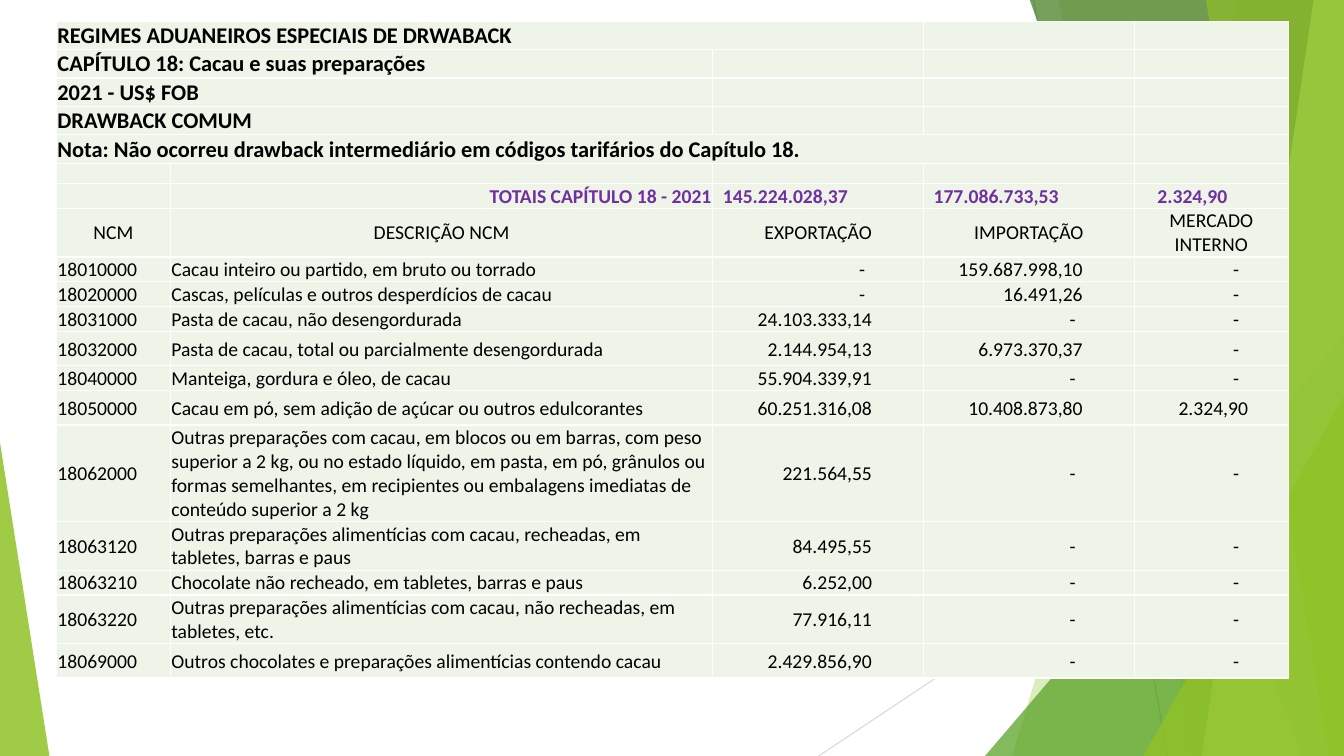
from dataclasses import dataclass

from lxml import etree
from pptx import Presentation
from pptx.dml.color import RGBColor
from pptx.enum.shapes import MSO_CONNECTOR, MSO_SHAPE
from pptx.enum.text import MSO_ANCHOR, PP_ALIGN
from pptx.oxml.ns import qn
from pptx.util import Inches, Pt

STRAIGHT = MSO_CONNECTOR.STRAIGHT
TRIANGLE = MSO_SHAPE.ISOSCELES_TRIANGLE
MIDDLE = MSO_ANCHOR.MIDDLE
LEFT, CENTER, RIGHT = PP_ALIGN.LEFT, PP_ALIGN.CENTER, PP_ALIGN.RIGHT


@dataclass(frozen=True)
class Theme:
    font: str = "Calibri"
    title_size: int = 16
    body_size: int = 14
    empty_size: int = 10
    black: str = "000000"
    purple: str = "7030A0"
    white: str = "FFFFFF"
    cell: str = "EEF4E8"
    gray: str = "BFBFBF"
    pale_gray: str = "D9D9D9"
    lime: str = "90C226"
    green: str = "54A021"
    dark_green: str = "3F7819"
    light_lime: str = "C0E474"


THEME = Theme()
WIDTH, HEIGHT, TOP = 13.33, 7.5, -0.01

TITLES = [
    ("REGIMES ADUANEIROS ESPECIAIS DE DRWABACK", 3),
    ("CAPÍTULO 18: Cacau e suas preparações", 2),
    ("2021 - US$ FOB", 2),
    ("DRAWBACK COMUM", 2),
    ("Nota: Não ocorreu drawback intermediário em códigos tarifários do Capítulo 18.", 4),
]
TOTALS = ["", "TOTAIS CAPÍTULO 18 - 2021", "145.224.028,37", "177.086.733,53", "2.324,90"]
HEADERS = ["NCM", "DESCRIÇÃO NCM", "EXPORTAÇÃO", "IMPORTAÇÃO", "MERCADO INTERNO"]
PRODUCTS = [
    ("18010000", "Cacau inteiro ou partido, em bruto ou torrado", "-", "159.687.998,10", "-"),
    ("18020000", "Cascas, películas e outros desperdícios de cacau", "-", "16.491,26", "-"),
    ("18031000", "Pasta de cacau, não desengordurada", "24.103.333,14", "-", "-"),
    ("18032000", "Pasta de cacau, total ou parcialmente desengordurada",
     "2.144.954,13", "6.973.370,37", "-"),
    ("18040000", "Manteiga, gordura e óleo, de cacau", "55.904.339,91", "-", "-"),
    ("18050000", "Cacau em pó, sem adição de açúcar ou outros edulcorantes",
     "60.251.316,08", "10.408.873,80", "2.324,90"),
    ("18062000", "Outras preparações com cacau, em blocos ou em barras, com peso superior a 2 kg, "
     "ou no estado líquido, em pasta, em pó, grânulos ou formas semelhantes, em recipientes ou "
     "embalagens imediatas de conteúdo superior a 2 kg", "221.564,55", "-", "-"),
    ("18063120", "Outras preparações alimentícias com cacau, recheadas, em tabletes, barras e paus",
     "84.495,55", "-", "-"),
    ("18063210", "Chocolate não recheado, em tabletes, barras e paus", "6.252,00", "-", "-"),
    ("18063220", "Outras preparações alimentícias com cacau, não recheadas, em tabletes, etc.",
     "77.916,11", "-", "-"),
    ("18069000", "Outros chocolates e preparações alimentícias contendo cacau",
     "2.429.856,90", "-", "-"),
]
COLUMN_WIDTHS = [1.13, 5.38, 2.09, 2.09, 1.53]
ROW_HEIGHTS = [0.25] * 4 + [0.2, 0.2, 0.21, 0.34] + [
    0.2, 0.2, 0.2, 0.34, 0.2, 0.34, 0.86, 0.34, 0.2, 0.34, 0.34]
TOTAL_INDENTS = [0.01, 0.01, 0.1, 0.1, 0.23]
NUMBER_INDENTS = {2: 0.51, 3: 0.51, 4: 0.4}
DASH_INDENTS = {2: 0.58, 3: 0.58, 4: 0.49}

BANDS = [
    ([(12.28, TOP), (WIDTH, TOP), (WIDTH, HEIGHT), (10.04, HEIGHT)], THEME.lime, 30),
    ([(10.5, TOP), (WIDTH, TOP), (WIDTH, HEIGHT), (11.83, HEIGHT)], THEME.lime, 20),
    ([(10.21, TOP), (WIDTH, TOP), (WIDTH, HEIGHT), (12.91, HEIGHT)], THEME.dark_green, 70),
    ([(13.03, TOP), (WIDTH, TOP), (WIDTH, HEIGHT), (11.92, HEIGHT)], THEME.light_lime, 70),
    ([(11.96, TOP), (WIDTH, TOP), (WIDTH, HEIGHT), (13.18, HEIGHT)], THEME.lime, 65),
]


def apply(target, values):
    for name, value in values.items():
        setattr(target, name, value)


class SlideBuilder:
    def __init__(self, page, theme):
        self.page = page
        self.theme = theme

    def line(self, start, end, color):
        line = self.page.shapes.add_connector(STRAIGHT, *map(Inches, start + end))
        line.line.color.rgb = RGBColor.from_string(color)
        line.line.width = Pt(0.75)
        etree.SubElement(line._element.spPr, qn("a:effectLst"))

    def paint(self, shape, color, opacity):
        shape.shadow.inherit = False
        shape.fill.solid()
        shape.fill.fore_color.rgb = RGBColor.from_string(color)
        shape.line.fill.background()
        swatch = shape._element.spPr.find(".//" + qn("a:srgbClr"))
        etree.SubElement(swatch, qn("a:alpha"), val=str(opacity * 1000))

    def band(self, points, color, opacity):
        corners = [(Inches(x), Inches(y)) for x, y in points]
        outline = self.page.shapes.build_freeform(*corners[0])
        outline.add_line_segments(corners[1:], close=True)
        self.paint(outline.convert_to_shape(), color, opacity)

    def triangle(self, frame, apex, color, opacity):
        shape = self.page.shapes.add_shape(TRIANGLE, *map(Inches, frame))
        shape.adjustments[0] = apex
        self.paint(shape, color, opacity)

    def table(self, left, top, widths, heights):
        frame = self.page.shapes.add_table(
            len(heights), len(widths), Inches(left), Inches(top),
            Inches(sum(widths)), Inches(sum(heights)))
        table = frame.table
        apply(table, {"first_row": False, "horz_banding": False})
        for column, width in zip(table.columns, widths):
            column.width = Inches(width)
        for row, height in zip(table.rows, heights):
            row.height = Inches(height)
        for cell in table.iter_cells():
            self.cell_style(cell)
        return table

    def cell_style(self, cell):
        properties = cell._tc.get_or_add_tcPr()
        for side in ("lnL", "lnR", "lnT", "lnB"):
            border = etree.SubElement(properties, qn("a:" + side), w=str(Pt(1)))
            fill = etree.SubElement(border, qn("a:solidFill"))
            etree.SubElement(fill, qn("a:srgbClr"), val=self.theme.white)
        cell.fill.solid()
        cell.fill.fore_color.rgb = RGBColor.from_string(self.theme.cell)
        apply(cell, {"vertical_anchor": MIDDLE, "margin_left": Inches(0.01),
                     "margin_right": Inches(0.01), "margin_top": Inches(0.01),
                     "margin_bottom": 0})

    def cell_text(self, cell, text, size, color, bold=False, align=LEFT, indent=0.01):
        para = cell.text_frame.paragraphs[0]
        para.alignment = align
        side = "margin_right" if align == RIGHT else "margin_left"
        apply(cell, {side: Inches(indent)})
        span = para.add_run()
        span.text = text
        apply(span.font, {"name": self.theme.font, "size": Pt(size), "bold": bold})
        span.font.color.rgb = RGBColor.from_string(color)

    def empty_cells(self, table):
        for cell in table.iter_cells():
            if not cell.text_frame.text:
                para = cell.text_frame.paragraphs[0]
                etree.SubElement(para._p, qn("a:endParaRPr"),
                                 sz=str(self.theme.empty_size * 100))


def fill_table(builder, table):
    theme = builder.theme
    for row, (title, columns) in enumerate(TITLES):
        cell = table.cell(row, 0)
        cell.merge(table.cell(row, columns - 1))
        builder.cell_text(cell, title, theme.title_size, theme.black, bold=True)
    totals_row = len(TITLES) + 1
    for column, text in enumerate(TOTALS):
        if text:
            builder.cell_text(table.cell(totals_row, column), text, theme.body_size, theme.purple,
                              True, RIGHT if column == 1 else LEFT, TOTAL_INDENTS[column])
    for column, text in enumerate(HEADERS):
        builder.cell_text(table.cell(totals_row + 1, column), text, theme.body_size,
                          theme.black, align=CENTER)
    for row, product in enumerate(PRODUCTS, totals_row + 2):
        for column, text in enumerate(product):
            indents = DASH_INDENTS if text == "-" else NUMBER_INDENTS
            builder.cell_text(table.cell(row, column), text, theme.body_size, theme.black,
                              align=RIGHT if column > 1 else LEFT,
                              indent=indents.get(column, 0.01))
    builder.empty_cells(table)


def main():
    deck = Presentation()
    apply(deck, {"slide_width": Inches(WIDTH), "slide_height": Inches(HEIGHT)})
    page = deck.slides.add_slide(deck.slide_layouts[6])
    builder = SlideBuilder(page, THEME)
    builder.line((10.25, 0), (11.58, HEIGHT), THEME.gray)
    builder.line((WIDTH, 4.03), (8.12, HEIGHT), THEME.pale_gray)
    for band in BANDS[:2]:
        builder.band(*band)
    builder.triangle((9.77, 3.33, 3.56, 4.17), 1, THEME.green, 72)
    for band in BANDS[2:]:
        builder.band(*band)
    builder.triangle((11.34, 3.93, 1.99, 3.57), 1, THEME.lime, 80)
    builder.triangle((0, 4.39, 0.49, 3.11), 0, THEME.lime, 85)
    fill_table(builder, builder.table(0.56, 0.21, COLUMN_WIDTHS, ROW_HEIGHTS))
    deck.save("out.pptx")


if __name__ == "__main__":
    main()
